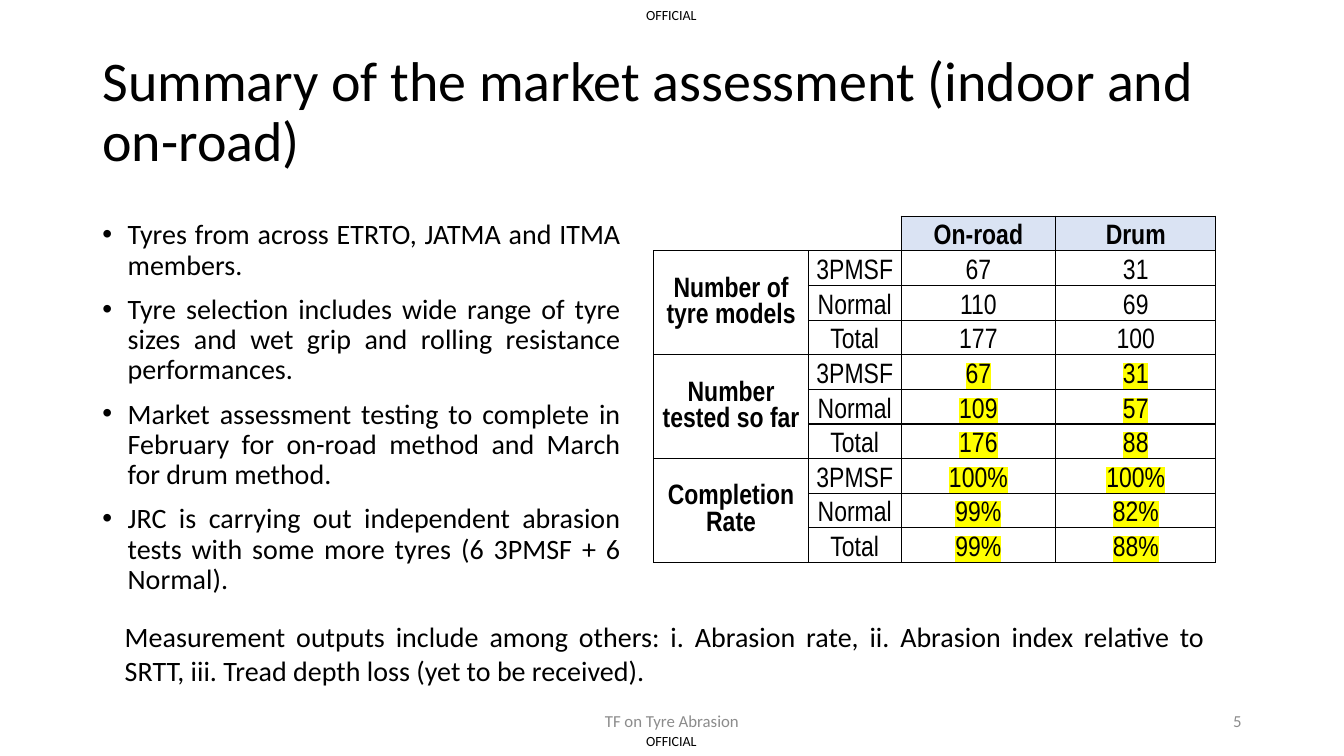
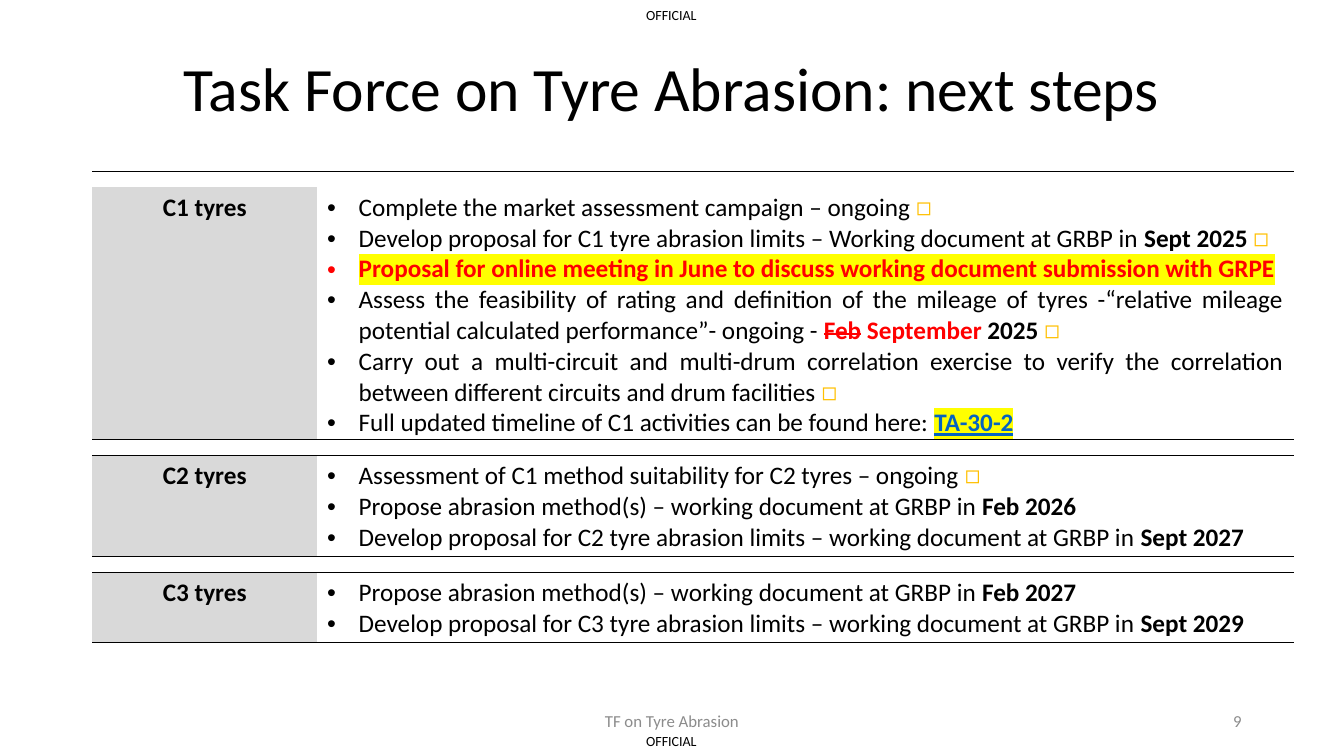
import collections

import lxml.etree
import pptx
import pptx.dml.color
import pptx.enum.text
import pptx.oxml.ns
import pptx.util

Pt = pptx.util.Pt
RGBColor = pptx.dml.color.RGBColor
ALIGN = pptx.enum.text.PP_ALIGN
ANCHOR = pptx.enum.text.MSO_ANCHOR
qn = pptx.oxml.ns.qn
Box = collections.namedtuple("Box", "left top width height")

# Shared look
BLACK = RGBColor(0x00, 0x00, 0x00)
FOOTER_GREY = RGBColor(0x8C, 0x8C, 0x8C)
LABEL_GREY = RGBColor(0xD9, 0xD9, 0xD9)
HEADER_BLUE = RGBColor(0xDA, 0xE3, 0xF3)
YELLOW = RGBColor(0xFF, 0xFF, 0x00)
AMBER = RGBColor(0xFF, 0xC0, 0x00)
RED = RGBColor(0xFF, 0x00, 0x00)
LINK_BLUE = RGBColor(0x05, 0x63, 0xC1)
FONT, NARROW_FONT = "Calibri", "Arial Narrow"
NO_GRID_STYLE = "{2D5ABB26-0587-4C30-8999-92F81FD0307C}"
SLIDE_WIDTH, SLIDE_HEIGHT = 960, 540

# Run styles
PLAIN = {}
BOLD = {"bold": True}
RED_BOLD = {"bold": True, "color": RED}
STRUCK = {"bold": True, "color": RED, "strike": True}
ALERT = {"bold": True, "color": RED, "highlight": YELLOW}
REFERENCE = {"bold": True, "color": LINK_BLUE, "underline": True, "highlight": YELLOW}
MARKED = {"highlight": YELLOW}
ONGOING = ("◻", {"color": AMBER})

# Content
MARKET_POINTS = [
    "Tyres from across ETRTO, JATMA and ITMA members.",
    "Tyre selection includes wide range of tyre sizes and wet grip and rolling "
    "resistance performances.",
    "Market assessment testing to complete in February for on-road method and March "
    "for drum method.",
    "JRC is carrying out independent abrasion tests with some more tyres "
    "(6 3PMSF + 6 Normal).",
]
MEASUREMENTS = ("Measurement outputs include among others: i. Abrasion rate, ii. Abrasion "
                "index relative to SRTT, iii. Tread depth loss (yet to be received).")
METHODS = ["On-road", "Drum"]
TYRE_KINDS = ["3PMSF", "Normal", "Total"]
ASSESSMENT = [
    ("Number of tyre models", PLAIN, [("67", "31"), ("110", "69"), ("177", "100")]),
    ("Number tested so far", MARKED, [("67", "31"), ("109", "57"), ("176", "88")]),
    ("Completion Rate", MARKED, [("100%", "100%"), ("99%", "82%"), ("99%", "88%")]),
]


def proposal(tyre_class, date):
    return [(f"Develop proposal for {tyre_class} tyre abrasion limits – working document "
             "at GRBP in ", PLAIN), (date, BOLD)]


def method(date):
    return [("Propose abrasion method(s) – working document at GRBP in ", PLAIN), (date, BOLD)]


# Each step group: label, row height, alignment, steps
NEXT_STEPS = [
    ("C1 tyres", 180, ALIGN.JUSTIFY, [
        [("Complete the market assessment campaign – ongoing ", PLAIN), ONGOING],
        [("Develop proposal for C1 tyre abrasion limits – Working document at GRBP in ", PLAIN),
         ("Sept 2025 ", BOLD), ONGOING],
        [("Proposal for online meeting in June to discuss working document submission "
          "with GRPE", ALERT)],
        [("Assess the feasibility of rating and definition of the mileage of tyres "
          "-“relative mileage potential calculated performance”- ongoing - ", PLAIN),
         ("Feb", STRUCK), (" ", BOLD), ("September", RED_BOLD), (" 2025 ", BOLD), ONGOING],
        [("Carry out a multi-circuit and multi-drum correlation exercise to verify the "
          "correlation between different circuits and drum facilities ", PLAIN), ONGOING],
        [("Full updated timeline of C1 activities can be found here: ", PLAIN),
         ("TA-30-2", REFERENCE)],
    ]),
    ("C2 tyres", 72, ALIGN.LEFT, [
        [("Assessment of C1 method suitability for C2 tyres – ongoing ", PLAIN), ONGOING],
        method("Feb 2026"),
        proposal("C2", "Sept 2027"),
    ]),
    ("C3 tyres", 50, ALIGN.LEFT, [method("Feb 2027"), proposal("C3", "Sept 2029")]),
]


# Text helpers
def place(shape, box):
    shape.left, shape.top, shape.width, shape.height = (Pt(length) for length in box)


def add_bullet(paragraph, indent):
    properties = paragraph._p.get_or_add_pPr()
    properties.set("marL", str(Pt(indent)))
    properties.set("indent", str(-Pt(indent)))
    lxml.etree.SubElement(properties, qn("a:buFont")).set("typeface", "Arial")
    lxml.etree.SubElement(properties, qn("a:buChar")).set("char", "•")


def add_run(paragraph, text, style):
    run = paragraph.add_run()
    run.text = text
    run.font.color.rgb = style.get("color", BLACK)
    if style.get("bold"):
        run.font.bold = True
    if style.get("underline"):
        run.font.underline = True
    properties = run._r.get_or_add_rPr()
    if style.get("strike"):
        properties.set("strike", "sngStrike")
    if "highlight" in style:
        highlight = lxml.etree.Element(qn("a:highlight"))
        lxml.etree.SubElement(highlight, qn("a:srgbClr")).set("val", str(style["highlight"]))
        properties.find(qn("a:solidFill")).addnext(highlight)


def write(frame, paragraphs, size, align, font=FONT, indent=0, spacing=None, before=0):
    """Fill a text frame; each paragraph is a list of (text, style) runs."""
    for index, runs in enumerate(paragraphs):
        paragraph = frame.paragraphs[0] if index == 0 else frame.add_paragraph()
        if indent:
            add_bullet(paragraph, indent)
        paragraph.alignment = align
        paragraph.space_before = Pt(before)
        if spacing:
            paragraph.line_spacing = spacing
        paragraph.font.size = Pt(size)
        paragraph.font.name = font
        for text, style in runs:
            add_run(paragraph, text, style)


def add_text(slide, box, text, size, align, color=BLACK, anchor=ANCHOR.TOP, inset=True):
    textbox = slide.shapes.add_textbox(*(Pt(length) for length in box))
    frame = textbox.text_frame
    frame.word_wrap = inset
    frame.vertical_anchor = anchor
    if not inset:
        frame.margin_left = frame.margin_right = frame.margin_top = frame.margin_bottom = 0
    write(frame, [[(text, {"color": color})]], size, align)


# Table helpers
def add_plain_table(slide, box, widths, heights):
    frame = slide.shapes.add_table(len(heights), len(widths), *(Pt(length) for length in box))
    table = frame.table
    table._tbl.tblPr.find(qn("a:tableStyleId")).text = NO_GRID_STYLE
    table.first_row = table.horz_banding = False
    for column, width in zip(table.columns, widths):
        column.width = Pt(width)
    for row, height in zip(table.rows, heights):
        row.height = Pt(height)
    return table


def set_cell(cell, sides, fill=None):
    """Fill a cell and rule the given sides, a subset of "LRTB"."""
    if fill is None:
        cell.fill.background()
    else:
        cell.fill.solid()
        cell.fill.fore_color.rgb = fill
    properties = cell._tc.get_or_add_tcPr()
    for index, side in enumerate(s for s in "LRTB" if s in sides):
        line = lxml.etree.Element(qn(f"a:ln{side}"))
        line.set("w", str(Pt(1)))
        solid = lxml.etree.SubElement(line, qn("a:solidFill"))
        lxml.etree.SubElement(solid, qn("a:srgbClr")).set("val", str(BLACK))
        properties.insert(index, line)


def shrink_empty(cell):
    cell.margin_top = cell.margin_bottom = 0
    paragraph = cell.text_frame.paragraphs[0]._p
    lxml.etree.SubElement(paragraph, qn("a:endParaRPr")).set("sz", "500")


# Frame of every slide
def add_slide(prs, layout, title, title_box, size, align, number):
    slide = prs.slides.add_slide(prs.slide_layouts[layout])
    place(slide.shapes.title, title_box)
    frame = slide.shapes.title.text_frame
    frame.auto_size = pptx.enum.text.MSO_AUTO_SIZE.NONE
    frame.vertical_anchor = ANCHOR.MIDDLE
    write(frame, [[(title, PLAIN)]], size, align, spacing=0.9)
    for top in (5, 523):
        add_text(slide, Box(461.5, top, 38, 12), "OFFICIAL", 10, ALIGN.LEFT, inset=False)
    add_text(slide, Box(318, 500.5, 324, 28.8), "TF on Tyre Abrasion", 12, ALIGN.CENTER,
             FOOTER_GREY, ANCHOR.MIDDLE)
    add_text(slide, Box(678, 500.5, 216, 28.8), number, 12, ALIGN.RIGHT,
             FOOTER_GREY, ANCHOR.MIDDLE)
    return slide


# Regions
def fill_market_points(slide, box):
    points = slide.placeholders[1]
    place(points, box)
    points.text_frame.auto_size = pptx.enum.text.MSO_AUTO_SIZE.NONE
    write(points.text_frame, [[(point, PLAIN)] for point in MARKET_POINTS], 20,
          ALIGN.JUSTIFY, indent=18, spacing=0.9, before=10)


def add_assessment_table(slide, box):
    row_count = 1 + len(ASSESSMENT) * len(TYRE_KINDS)
    shares = (0.275, 0.165, 0.275, 0.285)
    table = add_plain_table(slide, box, [box.width * share for share in shares],
                            [box.height / row_count] * row_count)

    def put(row, column, text, style, sides, fill=None, anchor=ANCHOR.BOTTOM):
        cell = table.cell(row, column)
        set_cell(cell, sides, fill)
        cell.margin_left = cell.margin_right = cell.margin_top = Pt(0.7)
        cell.margin_bottom = 0
        cell.vertical_anchor = anchor
        write(cell.text_frame, [[(text, style)]], 20, ALIGN.CENTER, NARROW_FONT)

    for column in (0, 1):
        set_cell(table.cell(0, column), "B")
        shrink_empty(table.cell(0, column))
    for column, (name, side) in enumerate(zip(METHODS, "LR"), 2):
        put(0, column, name, BOLD, side + "TB", HEADER_BLUE)

    for group, (label, style, values) in enumerate(ASSESSMENT):
        first = 1 + group * len(TYRE_KINDS)
        last = first + len(TYRE_KINDS) - 1
        for row in range(first + 1, last + 1):
            set_cell(table.cell(row, 0), "LRB" if row == last else "LR")
        put(first, 0, label, BOLD, "LRTB", anchor=ANCHOR.MIDDLE)
        table.cell(first, 0).merge(table.cell(last, 0))
        edges = ("T", "B", "TB")
        for row, (kind, pair, edge) in enumerate(zip(TYRE_KINDS, values, edges), first):
            put(row, 1, kind, PLAIN, "LR" + edge)
            for column, (value, side) in enumerate(zip(pair, "LR"), 2):
                put(row, column, value, style, side + edge)


def add_next_steps_table(slide, box):
    gap = 11.5
    heights = [height for group in NEXT_STEPS for height in (gap, group[1])]
    label_width = 160.5
    table = add_plain_table(slide, box, [label_width, box.width - label_width], heights)
    for index, (label, _, align, steps) in enumerate(NEXT_STEPS):
        for column in (0, 1):
            spacer = table.cell(2 * index, column)
            set_cell(spacer, "T")
            shrink_empty(spacer)
        label_cell, steps_cell = (table.cell(2 * index + 1, column) for column in (0, 1))
        set_cell(label_cell, "B", LABEL_GREY)
        set_cell(steps_cell, "B")
        label_cell.margin_bottom = steps_cell.margin_bottom = 0
        write(label_cell.text_frame, [[(label, BOLD)]], 18, ALIGN.CENTER)
        write(steps_cell.text_frame, steps, 18, align, indent=22.5)


# Slides
def build_market_slide(prs):
    slide = add_slide(prs, 1, "Summary of the market assessment (indoor and on-road)",
                      Box(66, 28.8, 828, 104.4), 40, ALIGN.LEFT, "5")
    fill_market_points(slide, Box(66, 154, 384.5, 239))
    add_assessment_table(slide, Box(467, 154.5, 401.5, 240))
    add_text(slide, Box(82, 439, 785.5, 56), MEASUREMENTS, 20, ALIGN.JUSTIFY)


def build_next_steps_slide(prs):
    slide = add_slide(prs, 5, "Task Force on Tyre Abrasion: next steps",
                      Box(66, 28.8, 828, 72.7), 44, ALIGN.CENTER, "9")
    add_next_steps_table(slide, Box(66, 122.4, 858, 336.5))


def main():
    prs = pptx.Presentation()
    prs.slide_width, prs.slide_height = Pt(SLIDE_WIDTH), Pt(SLIDE_HEIGHT)
    build_market_slide(prs)
    build_next_steps_slide(prs)
    prs.save("out.pptx")


if __name__ == "__main__":
    main()
